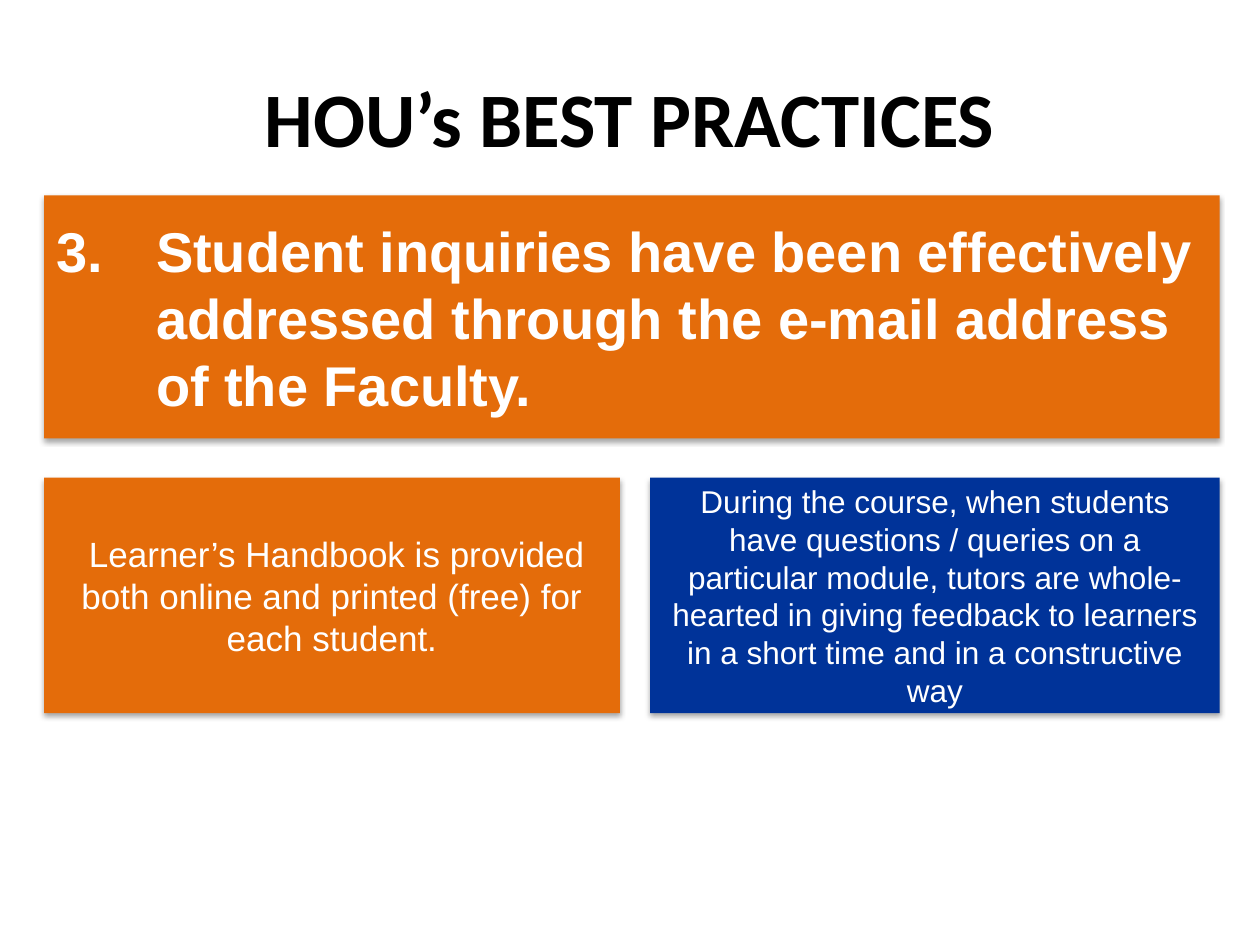
from lxml.etree import SubElement
from pptx import Presentation
from pptx.dml.color import RGBColor
from pptx.enum.shapes import MSO_SHAPE
from pptx.enum.text import MSO_ANCHOR, PP_ALIGN
from pptx.oxml.ns import qn
from pptx.util import Inches, Pt

COLORS = {
    "title": "000000",
    "text": "FFFFFF",
    "practice": "E46C0A",
    "feedback": "003399",
    "shadow": "000000",
}
LEFT, CONTENT_WIDTH = 0.35, 9.33
PANEL_GAP, LEFT_PANEL_WIDTH = 0.24, 4.57
HEADING_TOP, HEADING_HEIGHT = 1.55, 1.93
PANEL_TOP, PANEL_HEIGHT = 3.79, 1.87
NUMBER_INDENT = 0.79


def format_text(shape, font_name, size, color, bold, alignment):
    """Style the single paragraph of a shape and centre it vertically."""
    text_frame = shape.text_frame
    text_frame.word_wrap = True
    text_frame.vertical_anchor = MSO_ANCHOR.MIDDLE
    paragraph = text_frame.paragraphs[0]
    paragraph.alignment = alignment
    for run in paragraph.runs:
        run.font.name = font_name
        run.font.size = Pt(size)
        run.font.bold = bold
        run.font.color.rgb = RGBColor.from_string(COLORS[color])


def add_soft_shadow(shape):
    """Give a shape a soft shadow that falls straight down."""
    shape.shadow.inherit = False
    effects = shape._element.spPr.find(qn("a:effectLst"))
    shadow = SubElement(effects, qn("a:outerShdw"), blurRad=str(Pt(3.1)),
                        dist=str(Pt(1.8)), dir="5400000", rotWithShape="0")
    color = SubElement(shadow, qn("a:srgbClr"), val=COLORS["shadow"])
    SubElement(color, qn("a:alpha"), val="35000")


def add_panel(slide, box, text, fill, size, bold=False, alignment=PP_ALIGN.CENTER):
    """Add a filled rectangle with text in the given box."""
    shape = slide.shapes.add_shape(MSO_SHAPE.RECTANGLE, *map(Inches, box))
    shape.fill.solid()
    shape.fill.fore_color.rgb = RGBColor.from_string(COLORS[fill])
    shape.line.fill.background()
    add_soft_shadow(shape)
    shape.text_frame.text = text
    format_text(shape, "Arial", size, "text", bold, alignment)
    return shape


def add_title(slide, box, text):
    """Place and format the title placeholder in the given box."""
    title = slide.shapes.title
    title.left, title.top, title.width, title.height = map(Inches, box)
    title.text_frame.text = text
    format_text(title, "Calibri", 44, "title", True, PP_ALIGN.CENTER)


def add_heading(slide, box, text):
    """Add the numbered practice with a hanging indent."""
    heading = add_panel(slide, box, text, "practice", 32, True, PP_ALIGN.LEFT)
    properties = heading.text_frame.paragraphs[0]._p.get_or_add_pPr()
    properties.set("marL", str(Inches(NUMBER_INDENT)))
    properties.set("indent", str(Inches(-NUMBER_INDENT)))


def add_details(slide, box):
    """Split the box into the handbook and feedback panels."""
    left, top, width, height = box
    feedback_offset = LEFT_PANEL_WIDTH + PANEL_GAP
    add_panel(
        slide, (left, top, LEFT_PANEL_WIDTH, height),
        " Learner’s Handbook is provided both online and printed (free) "
        "for each student.", "practice", 20)
    add_panel(
        slide, (left + feedback_offset, top, width - feedback_offset, height),
        "During the course, when students have questions / queries on a "
        "particular module, tutors are whole-hearted in giving feedback to "
        "learners in a short time and in a constructive way", "feedback", 18)


def main():
    """Build and save the best practices slide."""
    presentation = Presentation()
    presentation.slide_width = Inches(10)
    presentation.slide_height = Inches(7.5)
    slide = presentation.slides.add_slide(presentation.slide_layouts[5])
    add_title(slide, (0.5, 0.3, 9, 1.25), "HOU’s BEST PRACTICES")
    add_heading(
        slide, (LEFT, HEADING_TOP, CONTENT_WIDTH, HEADING_HEIGHT),
        "3.\tStudent inquiries have been effectively addressed through the "
        "e-mail address of the Faculty.")
    add_details(slide, (LEFT, PANEL_TOP, CONTENT_WIDTH, PANEL_HEIGHT))
    presentation.save("out.pptx")


if __name__ == "__main__":
    main()
